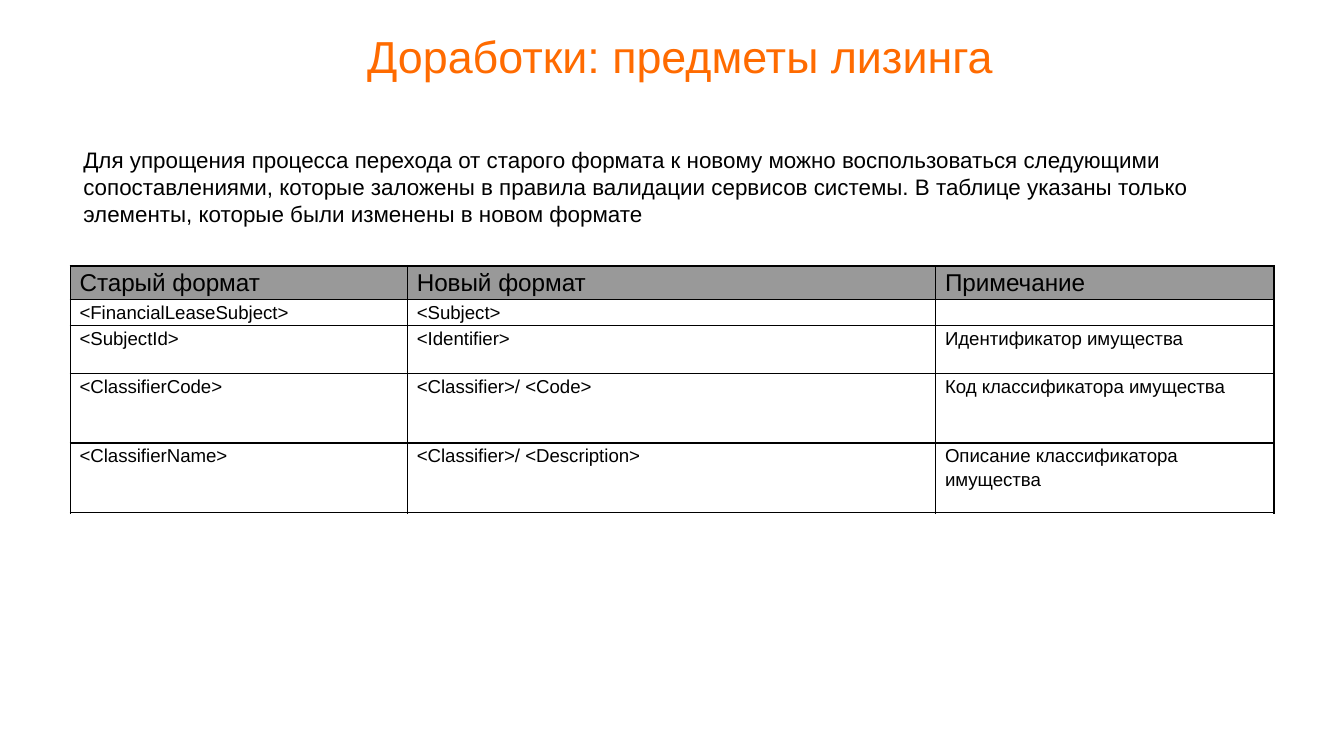
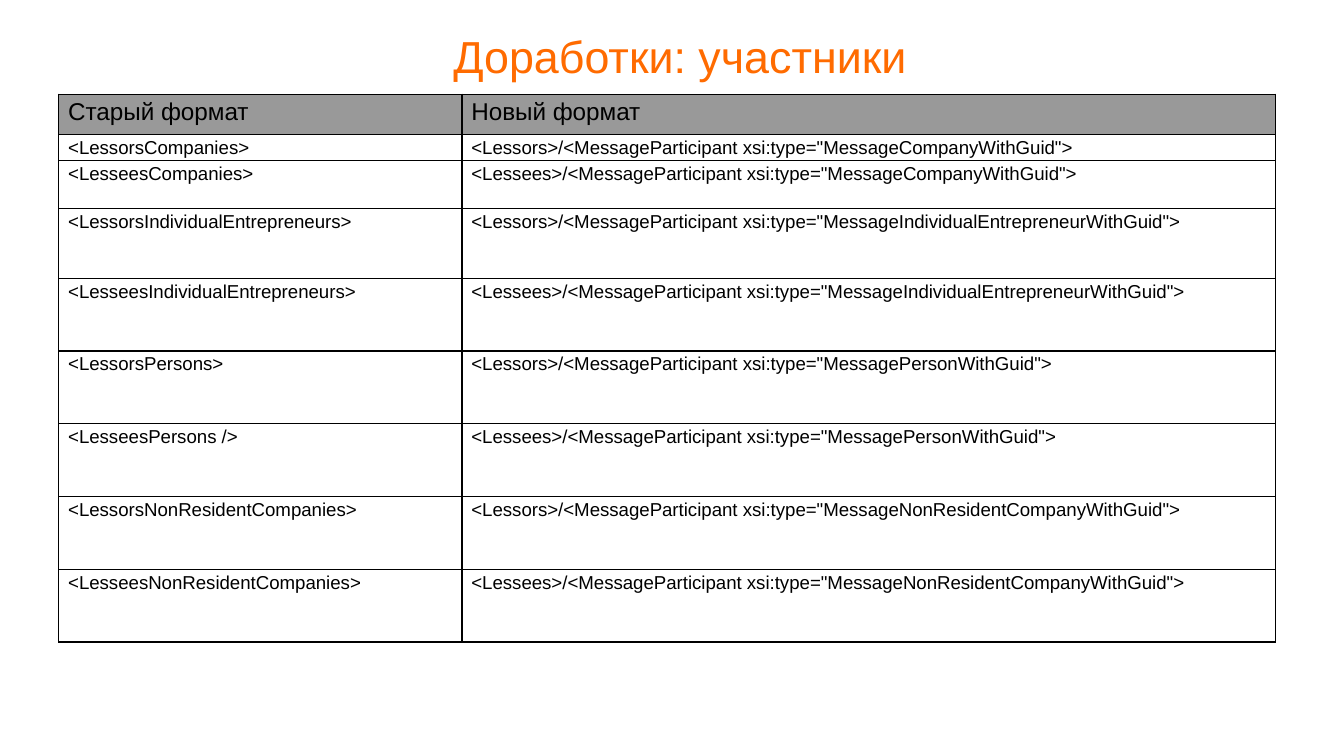
"""Build two slides that map old lease message elements to the new format."""
import lxml.etree
import pptx
import pptx.dml.color
import pptx.enum.text
import pptx.oxml.ns
import pptx.util

Pt = pptx.util.Pt
Align = pptx.enum.text.PP_ALIGN
Anchor = pptx.enum.text.MSO_ANCHOR
AutoSize = pptx.enum.text.MSO_AUTO_SIZE
qn = pptx.oxml.ns.qn

FONT = "Arial"
ORANGE = "FF6B00"
BLACK = "000000"
HEADER_GRAY = "999999"
BORDER_WIDTH = 0.68
TITLE_BOX = (95.76, 15.84, 537.12, 30.96)

INTRO = (
    "Для упрощения процесса перехода от старого формата к новому можно "
    "воспользоваться следующими сопоставлениями, которые заложены в правила "
    "валидации сервисов системы. В таблице указаны только элементы, которые "
    "были изменены в новом формате"
)
SUBJECT_ROWS = [
    ("Старый формат", "Новый формат", "Примечание"),
    ("<FinancialLeaseSubject>", "<Subject>", ""),
    ("<SubjectId>", "<Identifier>", "Идентификатор имущества"),
    ("<ClassifierCode>", "<Classifier>/ <Code>", "Код классификатора имущества"),
    ("<ClassifierName>", "<Classifier>/ <Description>", "Описание классификатора имущества"),
]
PARTICIPANT_KINDS = [
    ("Companies", "Company"),
    ("IndividualEntrepreneurs", "IndividualEntrepreneur"),
    ("Persons", "Person"),
    ("NonResidentCompanies", "NonResidentCompany"),
]


def color(hex_code):
    """Return the colour for a hex string."""
    return pptx.dml.color.RGBColor.from_string(hex_code)


def write(frame, text, size=10, ink=BLACK, align=Align.LEFT, spacing=1.0, gap=0):
    """Put one formatted paragraph into a text frame."""
    paragraph = frame.paragraphs[0]
    paragraph.alignment = align
    paragraph.line_spacing = spacing
    paragraph.space_before = paragraph.space_after = Pt(gap)
    if not text:
        lxml.etree.SubElement(paragraph._p, qn("a:endParaRPr"), sz=str(size * 100))
        return
    run = paragraph.add_run()
    run.text = text
    run.font.name = FONT
    run.font.size = Pt(size)
    run.font.bold = False
    run.font.color.rgb = color(ink)


def set_frame(frame, inset, anchor):
    """Set wrapping, insets and anchor of a text frame."""
    frame.word_wrap = True
    frame.auto_size = AutoSize.SHAPE_TO_FIT_TEXT
    frame.vertical_anchor = anchor
    frame.margin_left = frame.margin_right = Pt(inset)
    frame.margin_top = frame.margin_bottom = Pt(inset)


def add_titled_slide(deck, heading):
    """Add a slide with the shared title style."""
    slide = deck.slides.add_slide(deck.slide_layouts[5])
    title = slide.shapes.title
    title.left, title.top, title.width, title.height = map(Pt, TITLE_BOX)
    set_frame(title.text_frame, 2.16, Anchor.MIDDLE)
    write(title.text_frame, heading, size=24, ink=ORANGE, align=Align.CENTER, spacing=0.9)
    return slide


def add_intro(slide, text, box):
    """Add a wrapped introductory paragraph."""
    intro = slide.shapes.add_textbox(*map(Pt, box))
    set_frame(intro.text_frame, 7.2, Anchor.TOP)
    write(intro.text_frame, text, size=12)


def add_borders(cell):
    """Draw a thin black line on every side of a cell."""
    properties = cell._tc.get_or_add_tcPr()
    for side in ("lnL", "lnR", "lnT", "lnB"):
        line = lxml.etree.SubElement(properties, qn(f"a:{side}"), w=str(int(Pt(BORDER_WIDTH))))
        fill = lxml.etree.SubElement(line, qn("a:solidFill"))
        lxml.etree.SubElement(fill, qn("a:srgbClr"), val=BLACK)


def format_cell(cell, text, is_header):
    """Fill, border and write one table cell."""
    cell.margin_left = cell.margin_right = Pt(5.04)
    cell.margin_top = cell.margin_bottom = Pt(0)
    cell.vertical_anchor = Anchor.TOP
    add_borders(cell)
    if is_header:
        cell.fill.solid()
        cell.fill.fore_color.rgb = color(HEADER_GRAY)
    else:
        cell.fill.background()
    write(cell.text_frame, text, size=13 if is_header else 10, spacing=1.15, gap=12)


def add_mapping_table(slide, rows, left, top, widths, heights):
    """Add a table that pairs old elements with new ones."""
    frame = slide.shapes.add_table(
        len(rows), len(widths), Pt(left), Pt(top), Pt(sum(widths)), Pt(sum(heights))
    )
    mapping = frame.table
    mapping.horz_banding = False
    mapping.first_row = False
    for column, width in zip(mapping.columns, widths):
        column.width = Pt(width)
    for index, (row, height, texts) in enumerate(zip(mapping.rows, heights, rows)):
        row.height = Pt(height)
        for cell, text in zip(row.cells, texts):
            format_cell(cell, text, is_header=index == 0)


def participant_rows():
    """Return the header and one row per participant kind and role."""
    rows = [("Старый формат", "Новый формат")]
    for plural, single in PARTICIPANT_KINDS:
        for role in ("Lessors", "Lessees"):
            ending = " />" if role + plural == "LesseesPersons" else ">"
            new_element = f'<{role}>/<MessageParticipant xsi:type="Message{single}WithGuid">'
            rows.append((f"<{role}{plural}{ending}", new_element))
    return rows


def main():
    """Build and save the deck."""
    deck = pptx.Presentation()
    deck.slide_width, deck.slide_height = Pt(720), Pt(405)

    subjects = add_titled_slide(deck, "Доработки: предметы лизинга")
    add_mapping_table(
        subjects, SUBJECT_ROWS, 37.6, 142.5,
        widths=[180.7, 283, 181.3], heights=[17.7, 13.9, 25.7, 37.3, 37.5],
    )
    add_intro(subjects, INTRO, (37.6, 71.3, 645, 58.3))

    participants = add_titled_slide(deck, "Доработки: участники")
    add_mapping_table(
        participants, participant_rows(), 31.5, 50.5,
        widths=[216, 435.6], heights=[21.5, 13.9, 25.7, 37.5] + [39] * 5,
    )
    deck.save("out.pptx")


if __name__ == "__main__":
    main()
